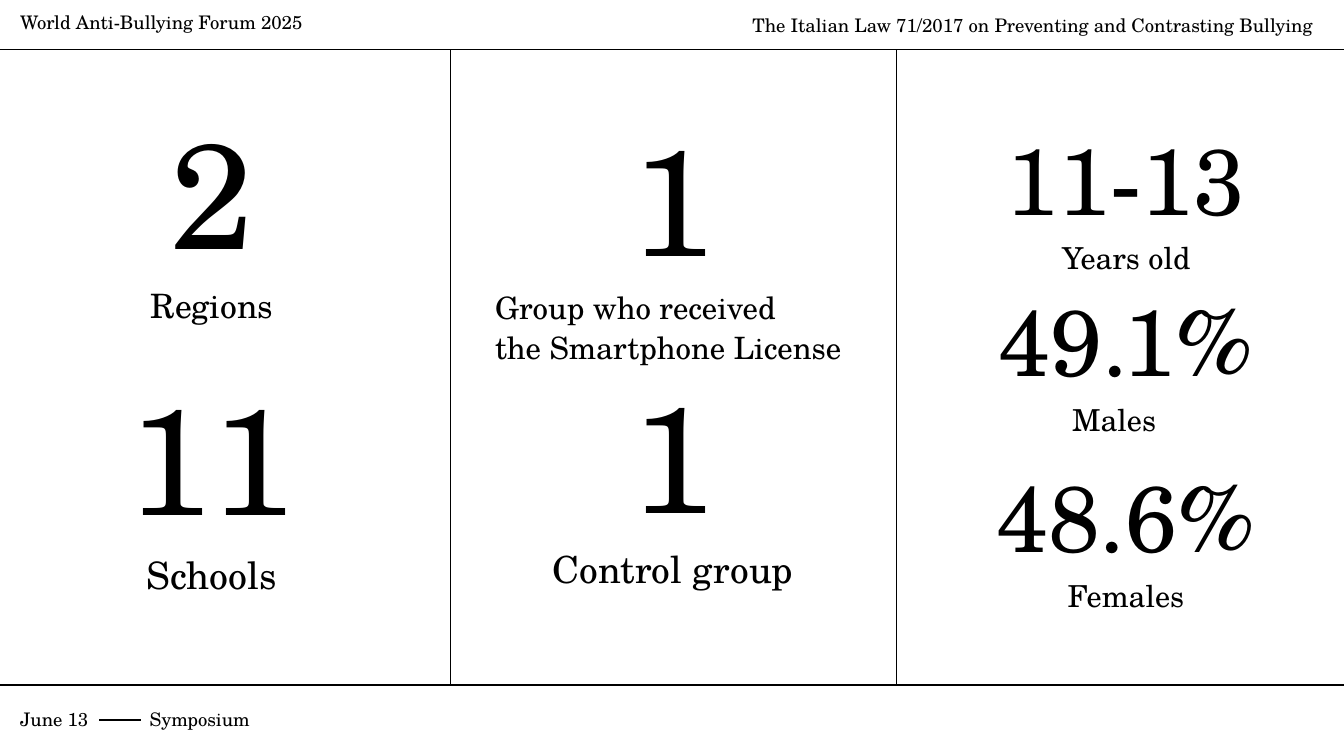
from copy import deepcopy

from lxml import etree
from pptx import Presentation
from pptx.dml.color import RGBColor
from pptx.enum.shapes import MSO_CONNECTOR
from pptx.enum.text import MSO_ANCHOR, MSO_AUTO_SIZE, PP_ALIGN
from pptx.oxml.ns import qn
from pptx.util import Cm, Pt

FONT = "TeX Gyre Schola"
BLACK = "000000"
WHITE = "FFFFFF"
LEFT, CENTER, RIGHT = PP_ALIGN.LEFT, PP_ALIGN.CENTER, PP_ALIGN.RIGHT
TOP, MIDDLE, BOTTOM = MSO_ANCHOR.TOP, MSO_ANCHOR.MIDDLE, MSO_ANCHOR.BOTTOM
STRAIGHT = MSO_CONNECTOR.STRAIGHT
NO_AUTOFIT = MSO_AUTO_SIZE.NONE

SLIDE_W, SLIDE_H = 25.4, 14.29
HEADER_Y, FOOTER_Y = 0.94, 12.95
COLUMN_RULES = (8.51, 16.94)
INSET = 0.25


def color(hex_code):
    return RGBColor.from_string(hex_code)


def add_rule(slide, x1, y1, x2, y2):
    rule = slide.shapes.add_connector(STRAIGHT, Cm(x1), Cm(y1), Cm(x2), Cm(y2))
    rule.line.color.rgb = color(BLACK)
    rule.line.width = Pt(0.75)
    etree.SubElement(rule._element.spPr, qn("a:effectLst"))


def place_box(slide, left, top, width, height, anchor=TOP, holder=None):
    """Position a text box, or the given placeholder, and return its frame."""
    box = holder or slide.shapes.add_textbox(0, 0, 0, 0)
    box.left, box.top = Cm(left), Cm(top)
    box.width, box.height = Cm(width), Cm(height)
    frame = box.text_frame
    frame.word_wrap = True
    frame.auto_size = NO_AUTOFIT
    frame.vertical_anchor = anchor
    frame.margin_left = frame.margin_right = Cm(INSET)
    frame.margin_top = frame.margin_bottom = Cm(INSET)
    return frame


def write(frame, text, size=10, align=LEFT, spacing=1.0, before=0, after=0,
          indent_left=0, indent_right=0, tab=None):
    """Add one formatted paragraph; the first call fills the empty one."""
    paragraph = frame.paragraphs[0] if not frame.text else frame.add_paragraph()
    paragraph.text = text
    paragraph.alignment = align
    paragraph.line_spacing = spacing
    paragraph.space_before, paragraph.space_after = Pt(before), Pt(after)
    properties = paragraph._p.get_or_add_pPr()
    properties.set("marL", str(Cm(indent_left)))
    properties.set("marR", str(Cm(indent_right)))
    if tab:
        stops = etree.SubElement(properties, qn("a:tabLst"))
        etree.SubElement(stops, qn("a:tab"), pos=str(Cm(tab)), algn="l")
    for run in paragraph.runs:
        run.font.name = FONT
        run.font.size = Pt(size)
        run.font.bold = False
        run.font.color.rgb = color(BLACK)
    # Line breaks take the format of the text around them
    for line_break in paragraph._p.findall(qn("a:br")):
        line_break.insert(0, deepcopy(paragraph.runs[0]._r.rPr))


def add_statistic(frame, number, label, number_size, label_size,
                  before=0, **label_format):
    write(frame, number, size=number_size, align=CENTER, before=before)
    label_style = {"align": CENTER, "spacing": 1.15, "after": 12, **label_format}
    write(frame, label, size=label_size, **label_style)


def add_frame(slide):
    # Rules above, below and between the columns
    for y in (HEADER_Y, FOOTER_Y):
        add_rule(slide, 0, y, SLIDE_W, y)
    for x in COLUMN_RULES:
        add_rule(slide, x, HEADER_Y, x, FOOTER_Y)

    # Header and footer texts
    write(place_box(slide, 0.13, 0, 7.7, 0.41), "World Anti-Bullying Forum 2025")
    write(place_box(slide, 13.06, 0, 11.99, 0.41),
          "The Italian Law 71/2017 on Preventing and Contrasting Bullying",
          align=RIGHT, spacing=1.15)
    write(place_box(slide, 0.13, 13.13, 5.51, 0.76), "June 13\tSymposium", tab=2.45)
    add_rule(slide, 1.88, 13.61, 2.67, 13.61)


def main():
    prs = Presentation()
    prs.slide_width, prs.slide_height = Cm(SLIDE_W), Cm(SLIDE_H)
    slide = prs.slides.add_slide(prs.slide_layouts[5])
    slide.background.fill.solid()
    slide.background.fill.fore_color.rgb = color(WHITE)
    add_frame(slide)

    # Left column: regions and schools
    regions = place_box(slide, 1.4, 0.94, 5.21, 5.46, BOTTOM, slide.shapes.title)
    add_statistic(regions, "2", "Regions", 80, 18)
    schools = place_box(slide, 1.4, 6.38, 5.21, 5.46, MIDDLE)
    add_statistic(schools, "11", "Schools", 80, 20.2)

    # Middle column: the two groups
    licensed = place_box(slide, 8.76, 1.7, 7.92, 5.46, BOTTOM)
    add_statistic(licensed, "1", "Group who received\vthe Smartphone License",
                  80, 16.5, align=LEFT, spacing=1.08, after=8, indent_left=0.35)
    control = place_box(slide, 8.76, 5.97, 7.92, 5.46, BOTTOM)
    add_statistic(control, "1", "Control group", 80, 20, spacing=1.08, after=8)

    # Right column: age and gender
    age = place_box(slide, 18.06, 1.85, 6.45, 3.61, BOTTOM)
    add_statistic(age, "11-13", "Years old", 50, 16.2)
    gender = place_box(slide, 17.32, 6.38, 7.92, 5.46, BOTTOM)
    add_statistic(gender, "49.1%", "Males", 50, 16.2, after=0, indent_right=0.45)
    add_statistic(gender, "48.6%", "Females", 50, 16.2, before=12)

    prs.save("out.pptx")


if __name__ == "__main__":
    main()
